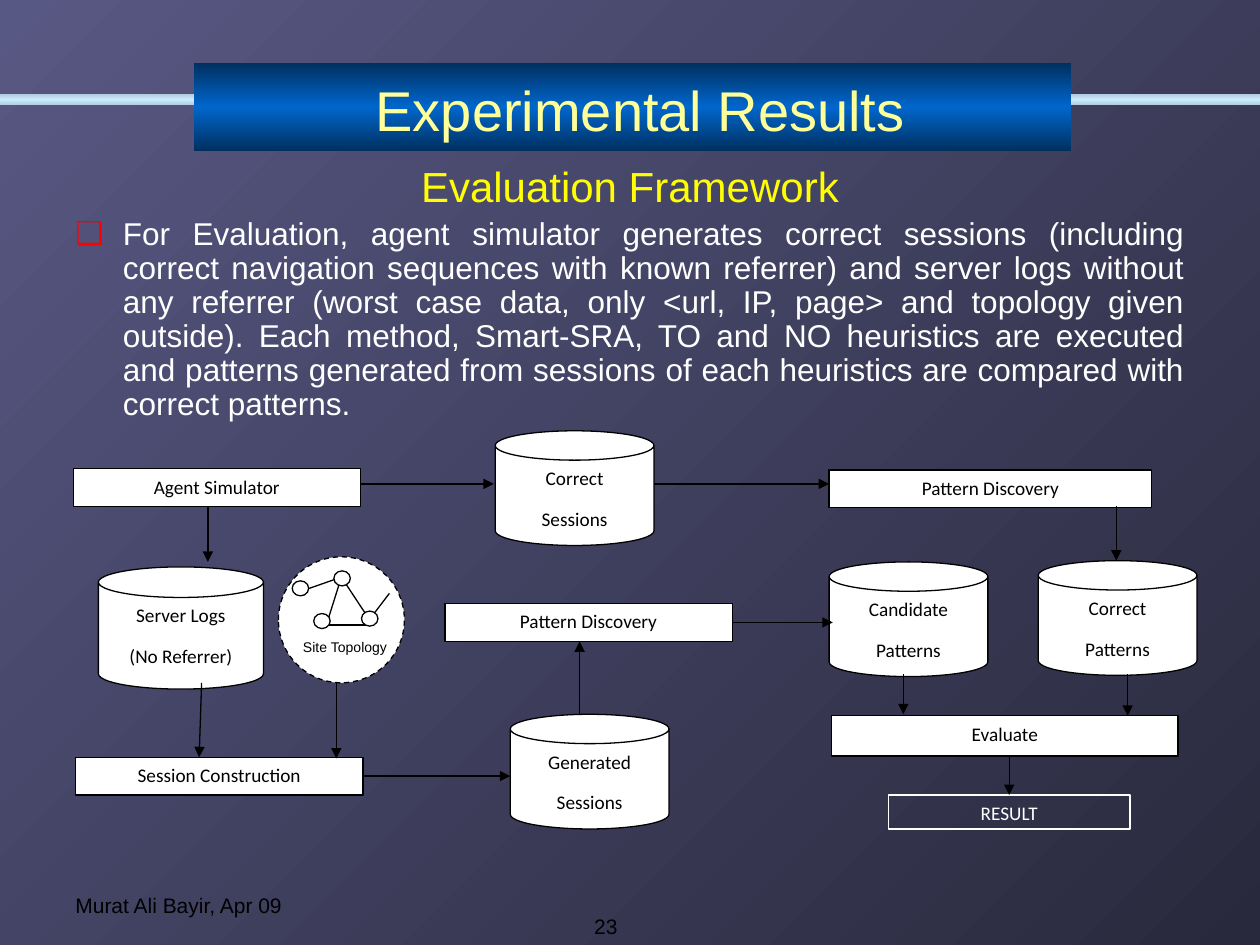
from dataclasses import dataclass

from lxml.etree import SubElement
from pptx import Presentation
from pptx.dml.color import RGBColor
from pptx.enum.dml import MSO_LINE
from pptx.enum.shapes import MSO_CONNECTOR, MSO_SHAPE
from pptx.enum.text import MSO_ANCHOR, MSO_AUTO_SIZE, PP_ALIGN
from pptx.oxml.ns import qn
from pptx.util import Pt


@dataclass(frozen=True)
class Theme:
    black: str = "000000"
    white: str = "FFFFFF"
    title: str = "FFFF99"
    heading: str = "FFFF00"
    bullet: str = "FF0000"
    backdrop: tuple = ("585884", "29293D")
    rail: tuple = ("B1CDDE", "CCECFF", "B1CDDE")
    banner: tuple = ("003060", "0066CC", "003060")
    font: str = "Arial"
    label_font: str = "Calibri"
    title_size: int = 32
    heading_size: int = 24
    body_size: int = 18
    footer_size: int = 12
    label_size: int = 11
    small_size: int = 8
    line_width: float = 0.75


theme = Theme()


def write(para, text, size, color=theme.black, font=theme.font,
          align=PP_ALIGN.CENTER, before=0, after=0, spacing=1.0):
    para.alignment = align
    para.space_before, para.space_after = Pt(before), Pt(after)
    para.line_spacing = spacing
    span = para.add_run()
    span.text = text
    span.font.size = Pt(size)
    span.font.name = font
    span.font.color.rgb = RGBColor.from_string(color)


def add_box(kind, bounds, fill=theme.white, line=theme.black):
    box = page.shapes.add_shape(kind, *map(Pt, bounds))
    box.shadow.inherit = False
    if fill:
        box.fill.solid()
        box.fill.fore_color.rgb = RGBColor.from_string(fill)
    else:
        box.fill.background()
    if line:
        box.line.color.rgb = RGBColor.from_string(line)
        box.line.width = Pt(theme.line_width)
    else:
        box.line.fill.background()
    return box


deck = Presentation()
deck.slide_width, deck.slide_height = Pt(720), Pt(540)
page = deck.slides.add_slide(deck.slide_layouts[1])

# Gradients: backdrop, rail and title banner
rail = add_box(MSO_SHAPE.RECTANGLE, (0, 54, 720, 6), line=None)
banner = add_box(MSO_SHAPE.RECTANGLE, (111, 36, 501, 50.4), line=None)
for owner, fill, colors, angle in (
    (page.background._cSld, page.background.fill, theme.backdrop, 315),
    (rail._element, rail.fill, theme.rail, 270),
    (banner._element, banner.fill, theme.banner, 270),
):
    fill.gradient()
    fill.gradient_angle = angle
    stops = owner.xpath(".//a:gsLst")[0]
    for stop in list(stops):
        stops.remove(stop)
    for index, color in enumerate(colors):
        position = str(100000 * index // (len(colors) - 1))
        stop = SubElement(stops, qn("a:gs"), pos=position)
        SubElement(stop, qn("a:srgbClr"), val=color)

# Title and body placeholders, raised above the banner
title, body = page.placeholders
for holder, bounds, inset in (
    (title, (42, 36, 648, 60), 7.2),
    (body, (36, 90, 648, 390), 5),
):
    holder.left, holder.top, holder.width, holder.height = map(Pt, bounds)
    frame = holder.text_frame
    frame.auto_size = MSO_AUTO_SIZE.NONE
    frame.vertical_anchor = MSO_ANCHOR.TOP
    frame.margin_top = Pt(inset)
    page.shapes._spTree.append(holder._element)

write(title.text_frame.paragraphs[0], "Experimental Results",
      theme.title_size, theme.title)

heading = body.text_frame.paragraphs[0]
summary = body.text_frame.add_paragraph()
for para, indent in ((heading, 0), (summary, 27)):
    properties = para._p.get_or_add_pPr()
    properties.set("marL", str(Pt(indent)))
    properties.set("indent", str(-Pt(indent)))
write(heading, "Evaluation Framework", theme.heading_size, theme.heading, spacing=0.9)
write(summary,
      "For Evaluation, agent simulator generates correct sessions (including correct "
      "navigation sequences with known referrer) and server logs without any referrer "
      "(worst case data, only <url, IP, page> and topology given outside). Each method, "
      "Smart-SRA, TO and NO heuristics are executed and patterns generated from sessions "
      "of each heuristics are compared with correct patterns.",
      theme.body_size, theme.white, align=PP_ALIGN.JUSTIFY, before=4, spacing=0.9)
SubElement(heading._p.pPr, qn("a:buNone"))
bullet_color = SubElement(summary._p.pPr, qn("a:buClr"))
SubElement(bullet_color, qn("a:srgbClr"), val=theme.bullet)
SubElement(summary._p.pPr, qn("a:buChar"), char="❑")

# Process boxes and data stores
step, store = MSO_SHAPE.RECTANGLE, MSO_SHAPE.CAN
boxes = {}
for name, kind, bounds, lines in (
    ("simulator", step, (41.8, 267.8, 164.2, 21.6), ["Agent Simulator"]),
    ("sessions", store, (283, 246.2, 90.7, 65.5), ["Correct", "Sessions"]),
    ("discovery", step, (473.8, 268.6, 184.3, 21.6), ["Pattern Discovery"]),
    ("patterns", store, (593.3, 320.4, 90.7, 65.5), ["Correct", "Patterns"]),
    ("construction", step, (43.2, 432.7, 164.2, 21.6), ["Session Construction"]),
    ("generated", store, (291.6, 408.2, 90.7, 65.5), ["Generated", "Sessions"]),
    ("mining", step, (254.2, 344.9, 164.2, 21.6), ["Pattern Discovery"]),
    ("candidates", store, (473.8, 321.1, 90.7, 65.5), ["Candidate", "Patterns"]),
    ("evaluate", step, (475.2, 409, 198, 23), ["Evaluate"]),
    ("result", step, (507.6, 454.3, 138.2, 19.4), ["RESULT"]),
    ("logs", store, (56.2, 324, 94.3, 69.8), ["Server Logs", "(No Referrer)"]),
):
    outlined = name == "result"
    ink = theme.white if outlined else theme.black
    box = boxes[name] = add_box(kind, bounds, None if outlined else theme.white, ink)
    if kind == store:
        box.adjustments[0] = 0.25 if name == "logs" else 0.256
    frame = box.text_frame
    frame.word_wrap = True
    frame.vertical_anchor = MSO_ANCHOR.TOP
    for index, line in enumerate(lines):
        para = frame.add_paragraph() if index else frame.paragraphs[0]
        write(para, line, theme.label_size, ink, theme.label_font, after=10)

topology = add_box(MSO_SHAPE.OVAL, (159.1, 318.2, 72, 72))
topology.line.dash_style = MSO_LINE.DASH

# Flow arrows, then the plain links of the topology graph
arrows = [
    (205.9, 276.5, 282.2, 276.5),
    (118.8, 289.4, 118.8, 321.1),
    (373.7, 276.5, 473.8, 276.5),
    (637.9, 289.4, 637.9, 320.4),
    (115.2, 390.2, 113.8, 432.7),
    (207.4, 443.5, 291.6, 443.5),
    (331.2, 408.2, 331.2, 366.5),
    (418.4, 355.7, 475.9, 355.7),
    (516.2, 385.2, 516.2, 408.2),
    (644.4, 385.2, 644.4, 409),
    (576.7, 432, 576.7, 454.3),
    (192.2, 390.2, 192.2, 433.4),
]
links = [
    (195.1, 329.8, 186.5, 357.1),
    (195.1, 329.8, 213.1, 357.1),
    (213.1, 357.1, 186.5, 357.1),
    (211, 354.2, 222.5, 339.1),
    (195.1, 329.8, 168.5, 339.1),
]
connectors = []
for index, ends in enumerate(arrows + links):
    connector = page.shapes.add_connector(MSO_CONNECTOR.STRAIGHT, *map(Pt, ends))
    connector.line.color.rgb = RGBColor.from_string(theme.black)
    connector.line.width = Pt(theme.line_width)
    properties = connector._element.spPr
    if index < len(arrows):
        SubElement(properties.find(qn("a:ln")), qn("a:tailEnd"), type="triangle")
    SubElement(properties, qn("a:effectLst"))
    connectors.append(connector)
connectors[5].begin_connect(boxes["construction"], 3)
connectors[7].begin_connect(boxes["mining"], 3)
connectors[10].end_connect(boxes["result"], 0)

for left, top in ((179.3, 350.6), (206.6, 349.2), (167, 331.9), (190.8, 326.2)):
    add_box(MSO_SHAPE.OVAL, (left, top, 9.4, 8.6))
add_box(MSO_SHAPE.RECTANGLE, (172.1, 362.9, 45.4, 18), line=theme.white)

# Topology label, footer and page number
for text, bounds, size, align, anchor, after in (
    ("Site Topology", (156.2, 361.4, 82.1, 23.8), theme.small_size,
     PP_ALIGN.CENTER, MSO_ANCHOR.TOP, 10),
    ("Murat Ali Bayir, Apr 09", (36, 491.8, 185.8, 36), theme.footer_size,
     PP_ALIGN.LEFT, MSO_ANCHOR.BOTTOM, 0),
    ("23", (288, 504, 72, 36), theme.footer_size,
     PP_ALIGN.RIGHT, MSO_ANCHOR.BOTTOM, 0),
):
    frame = page.shapes.add_textbox(*map(Pt, bounds)).text_frame
    frame.word_wrap = True
    frame.vertical_anchor = anchor
    write(frame.paragraphs[0], text, size, align=align, after=after)

deck.save("out.pptx")
